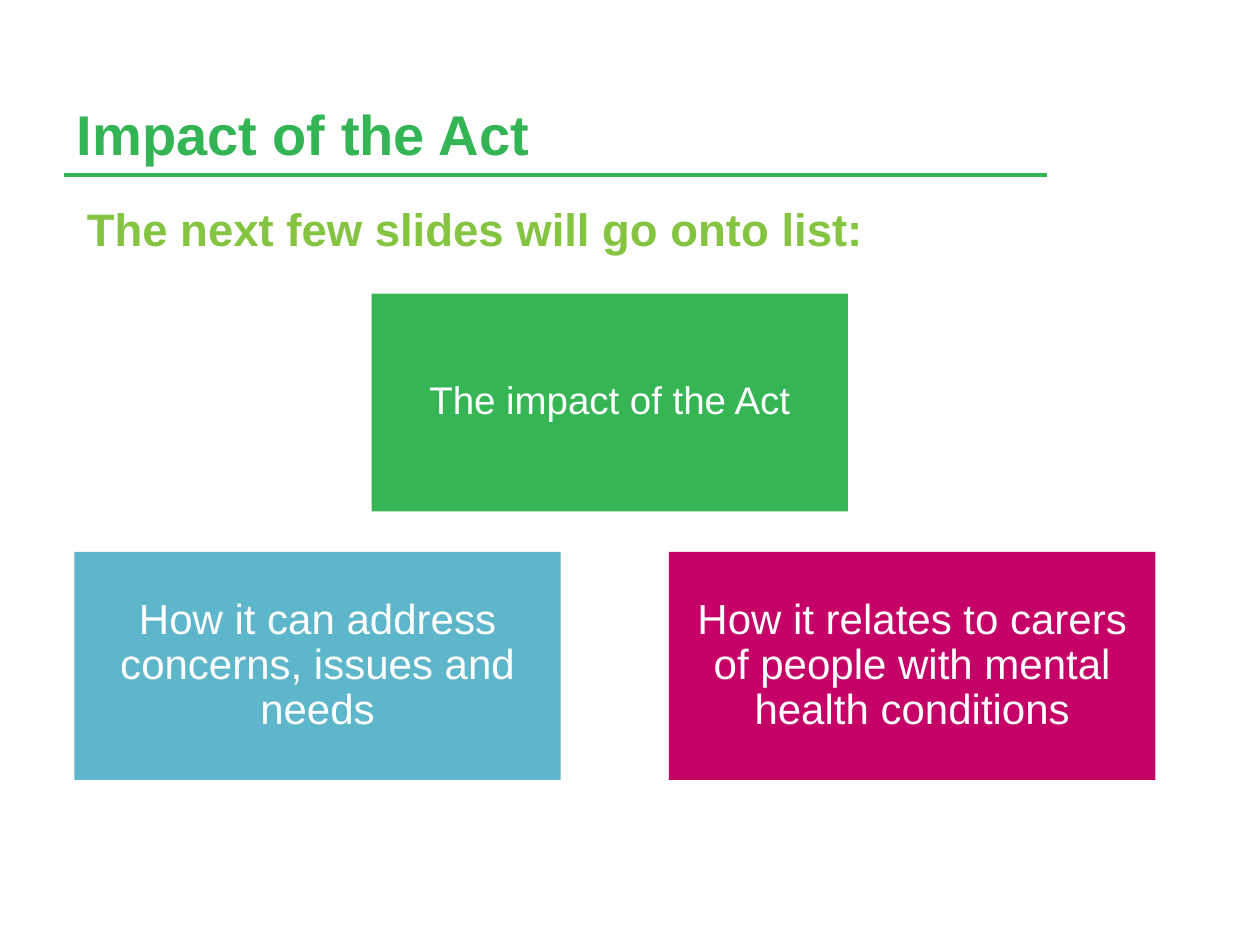
"""Build the "Impact of the Act" slide with a heading and three topic boxes."""
from dataclasses import dataclass

import pptx
import pptx.dml.color
import pptx.enum.shapes
import pptx.enum.text
import pptx.oxml.ns
import pptx.util
from lxml import etree

WIDTH, HEIGHT = 10, 7.5
LEFT_MARGIN = 0.59
RULE_LEFT, RULE_WIDTH, RULE_TOP = 0.51, 7.8, 1.39
LOWER_WIDTH, LOWER_TOP, LOWER_HEIGHT = 3.86, 4.38, 1.81
COLUMN_STEP = 4.72


@dataclass(frozen=True)
class Theme:
    font: str = "Arial"
    title: str = "34B555"
    subtitle: str = "85C441"
    green: str = "36B555"
    blue: str = "5DB6C9"
    magenta: str = "C50067"
    white: str = "FFFFFF"
    title_size: int = 32
    subtitle_size: int = 26
    lead_size: int = 22
    topic_size: int = 24


@dataclass(frozen=True)
class Topic:
    text: str
    left: float
    top: float
    width: float
    height: float
    fill: str
    size: int


THEME = Theme()
TOPICS = [
    Topic("The impact of the Act", 2.95, 2.33, 3.78, 1.73, THEME.green, THEME.lead_size),
    *(
        Topic(text, LEFT_MARGIN + column * COLUMN_STEP, LOWER_TOP, LOWER_WIDTH,
              LOWER_HEIGHT, fill, THEME.topic_size)
        for column, (text, fill) in enumerate([
            ("How it can address concerns, issues and needs", THEME.blue),
            ("How it relates to carers of people with mental health conditions", THEME.magenta),
        ])
    ),
]


def inches(*lengths: float) -> list[int]:
    return [pptx.util.Inches(length) for length in lengths]


def color(value: str) -> pptx.dml.color.RGBColor:
    return pptx.dml.color.RGBColor.from_string(value)


def write_text(shape, text: str, *, size: int, fill: str, bold: bool = False,
               align=pptx.enum.text.PP_ALIGN.LEFT,
               anchor=pptx.enum.text.MSO_ANCHOR.TOP,
               line_spacing: float = 1.0, inset: float = 0.05) -> None:
    frame = shape.text_frame
    frame.word_wrap = True
    frame.vertical_anchor = anchor
    frame.margin_left, frame.margin_right = inches(0.1, 0.1)
    frame.margin_top, frame.margin_bottom = inches(inset, inset)
    frame.text = text
    paragraph = frame.paragraphs[0]
    paragraph.alignment = align
    paragraph.line_spacing = line_spacing
    paragraph.space_before = pptx.util.Pt(0)
    font = paragraph.runs[0].font
    font.name = THEME.font
    font.size = pptx.util.Pt(size)
    font.bold = bold
    font.color.rgb = color(fill)


def draw_heading(slide) -> None:
    connector = slide.shapes.add_connector(
        pptx.enum.shapes.MSO_CONNECTOR.STRAIGHT,
        *inches(RULE_LEFT, RULE_TOP, RULE_LEFT + RULE_WIDTH, RULE_TOP))
    connector.line.color.rgb = color(THEME.title)
    connector.line.width = pptx.util.Pt(2)
    etree.SubElement(connector._element.spPr, pptx.oxml.ns.qn("a:effectLst"))

    title = slide.shapes.title
    title.left, title.top, title.width, title.height = inches(RULE_LEFT, 0.28, RULE_WIDTH, 1.09)
    write_text(title, "Impact of the Act", size=THEME.title_size, fill=THEME.title,
               bold=True, anchor=pptx.enum.text.MSO_ANCHOR.BOTTOM)

    subtitle = slide.shapes.add_textbox(*inches(LEFT_MARGIN, 1.55, 8.98, 0.54))
    write_text(subtitle, "The next few slides will go onto list:",
               size=THEME.subtitle_size, fill=THEME.subtitle, bold=True)
    subtitle.text_frame.auto_size = pptx.enum.text.MSO_AUTO_SIZE.SHAPE_TO_FIT_TEXT


def draw_topic(slide, topic: Topic) -> None:
    shape = slide.shapes.add_shape(
        pptx.enum.shapes.MSO_SHAPE.RECTANGLE,
        *inches(topic.left, topic.top, topic.width, topic.height))
    shape.shadow.inherit = False
    shape.fill.solid()
    shape.fill.fore_color.rgb = color(topic.fill)
    shape.line.fill.background()
    write_text(shape, topic.text, size=topic.size, fill=THEME.white,
               align=pptx.enum.text.PP_ALIGN.CENTER,
               anchor=pptx.enum.text.MSO_ANCHOR.MIDDLE, line_spacing=0.9, inset=0.1)


def main() -> None:
    presentation = pptx.Presentation()
    presentation.slide_width, presentation.slide_height = inches(WIDTH, HEIGHT)
    slide = presentation.slides.add_slide(presentation.slide_layouts.get_by_name("Title Only"))
    draw_heading(slide)
    for topic in TOPICS:
        draw_topic(slide, topic)
    presentation.save("out.pptx")


if __name__ == "__main__":
    main()
